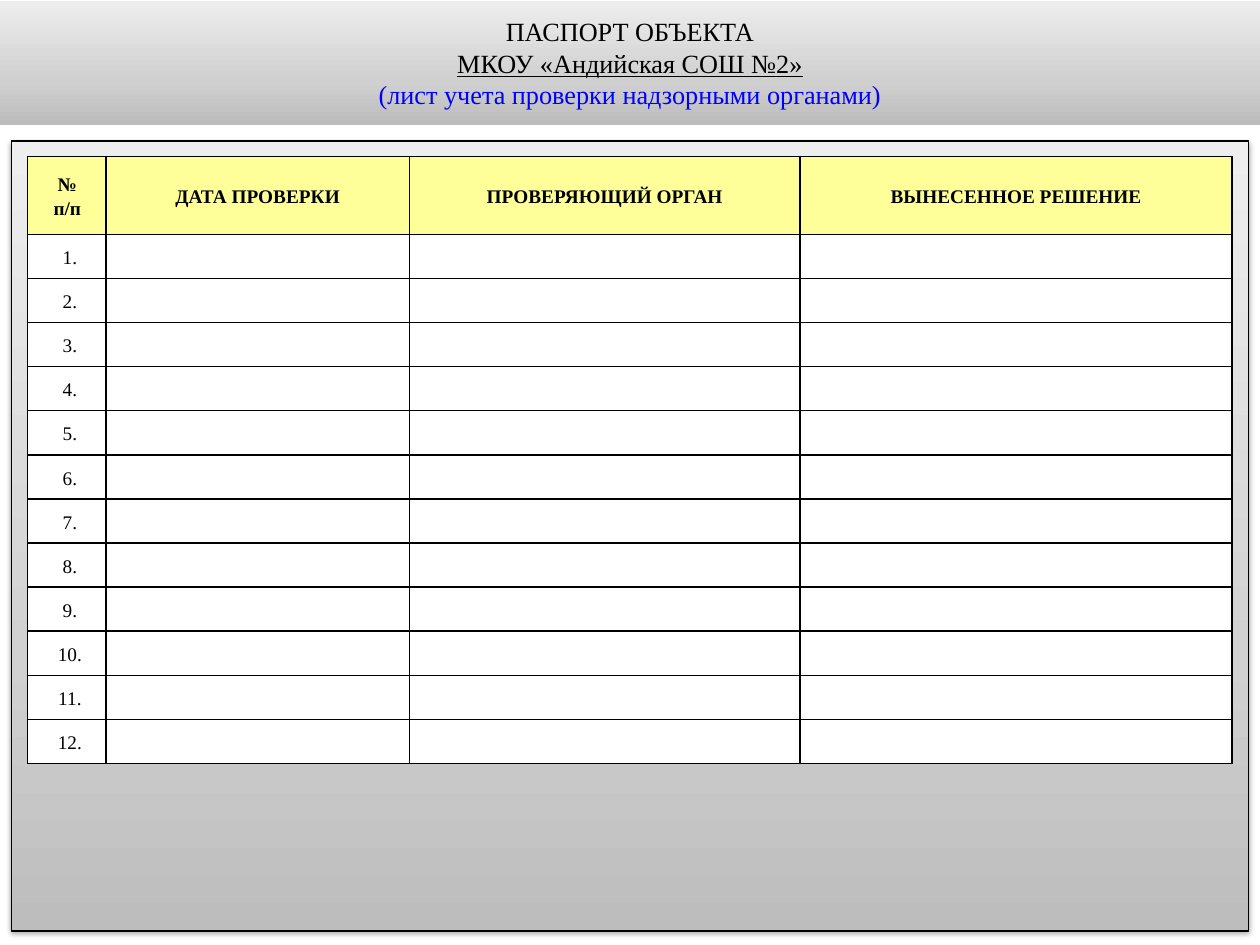
from copy import deepcopy

from lxml.etree import SubElement
from pptx import Presentation
from pptx.dml.color import RGBColor
from pptx.enum.shapes import MSO_SHAPE
from pptx.enum.text import MSO_ANCHOR, PP_ALIGN
from pptx.oxml.ns import qn
from pptx.util import Inches, Pt

BLACK = RGBColor(0x00, 0x00, 0x00)
WHITE = RGBColor(0xFF, 0xFF, 0xFF)
BLUE = RGBColor(0x00, 0x00, 0xFF)
YELLOW = RGBColor(0xFF, 0xFF, 0x99)
BANNER_GREYS = [RGBColor(level, level, level) for level in (0xBC, 0xD0, 0xED)]
PANEL_GREYS = [RGBColor(level, level, level) for level in (0xBD, 0xD1, 0xEE)]
FONT = "Times New Roman"

presentation = Presentation()
presentation.slide_width, presentation.slide_height = Inches(10), Inches(7.5)
slide = presentation.slides.add_slide(presentation.slide_layouts[6])


def add_gradient_box(left, top, width, height, greys):
    shape = slide.shapes.add_shape(
        MSO_SHAPE.RECTANGLE, Inches(left), Inches(top), Inches(width), Inches(height))
    shape.shadow.inherit = False
    shape.fill.gradient()
    shape.fill.gradient_angle = 90
    first_stop = shape._element.spPr.find(".//" + qn("a:gs"))
    first_stop.addnext(deepcopy(first_stop))
    for stop, position, grey in zip(shape.fill.gradient_stops, (0, 0.35, 1), greys):
        stop.position = position
        stop.color.rgb = grey
    return shape


def add_text(paragraph, text, size, color=BLACK, bold=False, underline=False):
    paragraph.alignment = PP_ALIGN.CENTER
    run = paragraph.add_run()
    run.text = text
    run.font.name, run.font.size = FONT, Pt(size)
    run.font.bold, run.font.underline = bold, underline
    run.font.color.rgb = color


# Title banner
banner = add_gradient_box(0, 0.01, 10, 0.98, BANNER_GREYS)
banner.line.fill.background()
title_frame = banner.text_frame
title_frame.word_wrap = True
title_frame.vertical_anchor = MSO_ANCHOR.MIDDLE
title_lines = [
    ("ПАСПОРТ ОБЪЕКТА", BLACK, False),
    ("МКОУ «Андийская СОШ №2»", BLACK, True),
    ("(лист учета проверки надзорными органами)", BLUE, False),
]
for index, (text, color, underline) in enumerate(title_lines):
    paragraph = title_frame.add_paragraph() if index else title_frame.paragraphs[0]
    add_text(paragraph, text, 15, color, underline=underline)

# Panel with a soft shadow
panel = add_gradient_box(0.09, 1.12, 9.82, 6.27, PANEL_GREYS)
panel.line.color.rgb = BLACK
panel.line.width = Pt(0.75)
effects = panel._element.spPr.find(qn("a:effectLst"))
shadow = SubElement(effects, qn("a:outerShdw"), blurRad=str(Pt(3.1)),
                    dist=str(Pt(1.6)), dir="5400000", rotWithShape="0")
shadow_color = SubElement(shadow, qn("a:srgbClr"), val=str(BLACK))
SubElement(shadow_color, qn("a:alpha"), val="38000")

# Inspection table
column_widths = [0.62, 2.41, 3.1, 3.43]
row_heights = [0.62] + [0.35] * 12
headers = ["№\nп/п", "ДАТА ПРОВЕРКИ", "ПРОВЕРЯЮЩИЙ ОРГАН", "ВЫНЕСЕННОЕ РЕШЕНИЕ"]
rows = [headers] + [[f"{number}.", "", "", ""] for number in range(1, 13)]
table = slide.shapes.add_table(
    len(rows), len(headers), Inches(0.22), Inches(1.24),
    Inches(sum(column_widths)), Inches(sum(row_heights))).table
for column, width in zip(table.columns, column_widths):
    column.width = Inches(width)
for row, height in zip(table.rows, row_heights):
    row.height = Inches(height)

for row_index, texts in enumerate(rows):
    is_header = row_index == 0
    for column_index, text in enumerate(texts):
        cell = table.cell(row_index, column_index)
        cell.vertical_anchor = MSO_ANCHOR.MIDDLE
        cell.margin_left = cell.margin_right = Inches(0.03)
        cell.margin_top = cell.margin_bottom = 0

        # Borders come before the fill in the cell properties
        properties = cell._tc.get_or_add_tcPr()
        for side in ("a:lnL", "a:lnR", "a:lnT", "a:lnB"):
            border = SubElement(properties, qn(side), w=str(Pt(1)))
            border_fill = SubElement(border, qn("a:solidFill"))
            SubElement(border_fill, qn("a:srgbClr"), val=str(BLACK))
        cell.fill.solid()
        cell.fill.fore_color.rgb = YELLOW if is_header else WHITE

        for index, line in enumerate(text.split("\n") if text else []):
            frame = cell.text_frame
            paragraph = frame.add_paragraph() if index else frame.paragraphs[0]
            paragraph.line_spacing = Pt(14) if is_header and column_index == 2 else 1.15
            if column_index == 0:
                indent = Inches(0.01 if is_header else 0.05)
                paragraph._p.get_or_add_pPr().set("marL", str(indent))
            add_text(paragraph, line, 11, bold=is_header)

presentation.save("out.pptx")
